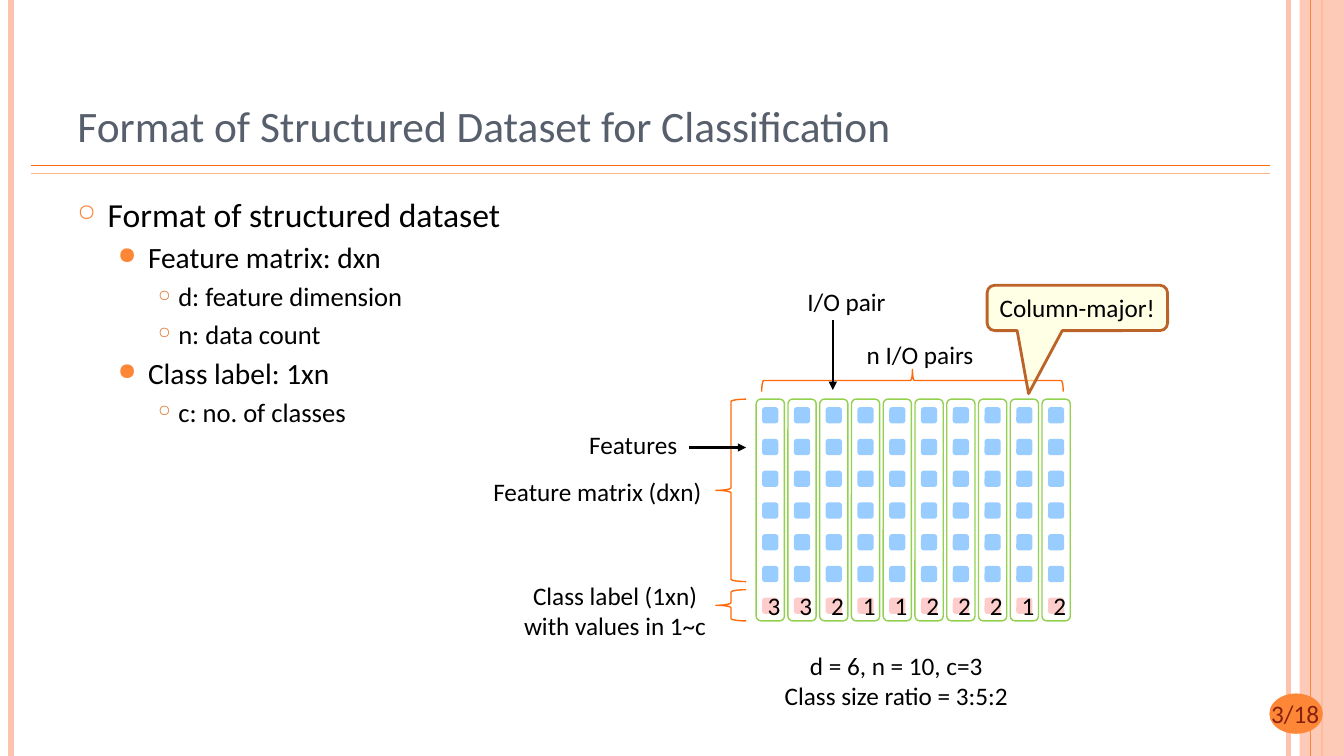
import pptx
import pptx.util
import pptx.dml.color
import pptx.enum.shapes
import pptx.enum.text
import pptx.oxml.ns
import lxml.etree

Inches = pptx.util.Inches
Pt = pptx.util.Pt
RGBColor = pptx.dml.color.RGBColor
MSO_SHAPE = pptx.enum.shapes.MSO_SHAPE
ANCHOR = pptx.enum.text.MSO_ANCHOR
ALIGN = pptx.enum.text.PP_ALIGN
qn = pptx.oxml.ns.qn

BLACK = RGBColor(0x00, 0x00, 0x00)
SLATE = RGBColor(0x57, 0x5F, 0x6D)
ORANGE = RGBColor(0xFE, 0x86, 0x37)
DEEP_ORANGE = RGBColor(0xFF, 0x6B, 0x0A)
PALE_ORANGE = RGBColor(0xFE, 0xB6, 0x87)
RUST = RGBColor(0xE0, 0x76, 0x31)
BROWN = RGBColor(0xBC, 0x63, 0x29)
MAROON = RGBColor(0x86, 0x21, 0x10)
SALMON = RGBColor(0xFE, 0xC3, 0xAE)
BLUE = RGBColor(0x99, 0xCC, 0xFF)
PINK = RGBColor(0xFF, 0xCC, 0xCC)
GREEN = RGBColor(0x92, 0xD0, 0x50)
CREAM = RGBColor(0xFF, 0xFF, 0xCC)

prs = pptx.Presentation()
prs.slide_width = Inches(13.33)
prs.slide_height = Inches(7.5)
s = prs.slides.add_slide(prs.slide_layouts[6])


def add_line(x1, y1, x2, y2, color, width, arrow=False):
    ln = s.shapes.add_connector(pptx.enum.shapes.MSO_CONNECTOR.STRAIGHT,
                                Inches(x1), Inches(y1), Inches(x2), Inches(y2))
    ln.line.color.rgb = color
    ln.line.width = Pt(width)
    if arrow:
        lxml.etree.SubElement(ln.line._get_or_add_ln(), qn("a:tailEnd"), type="triangle")
    lxml.etree.SubElement(ln._element.spPr, qn("a:effectLst"))


def add_box(kind, x, y, w, h, fill=None, line=None, width=1, alpha=100,
            lines=(), size=18, color=BLACK, align=ALIGN.CENTER, wrap=True):
    box = Inches(x), Inches(y), Inches(w), Inches(h)
    if kind is None:
        sp = s.shapes.add_textbox(*box)
    else:
        sp = s.shapes.add_shape(kind, *box)
        sp.shadow.inherit = False
        sp.text_frame.vertical_anchor = ANCHOR.MIDDLE
        if fill is None:
            sp.fill.background()
        else:
            sp.fill.solid()
            sp.fill.fore_color.rgb = fill
        if alpha < 100:
            clr = sp._element.spPr.find(qn("a:solidFill")).find(qn("a:srgbClr"))
            lxml.etree.SubElement(clr, qn("a:alpha"), val=str(alpha * 1000))
        if line is None:
            sp.line.fill.background()
        else:
            sp.line.color.rgb = line
            sp.line.width = Pt(width)
    tf = sp.text_frame
    tf.word_wrap = wrap
    for i, text in enumerate(lines):
        p = tf.add_paragraph() if i else tf.paragraphs[0]
        p.alignment = align
        r = p.add_run()
        r.text = text
        r.font.name = "Calibri"
        r.font.size = Pt(size)
        r.font.color.rgb = color
    return sp


for x, color, width in [(12.78, SALMON, 3), (0.11, SALMON, 4.5), (13.11, ORANGE, 1.5)]:
    add_line(x, 0, x, 7.5, color, width)
add_box(MSO_SHAPE.RECTANGLE, 12.89, 0, 0.44, 7.5, SALMON, alpha=87)
add_line(13, 0, 13, 7.5, ORANGE, 0.75)
add_line(0.31, 1.64, 12.6, 1.64, DEEP_ORANGE, 1)
add_line(0.31, 1.72, 12.6, 1.72, PALE_ORANGE, 1)
add_box(MSO_SHAPE.OVAL, 12.59, 6.88, 0.53, 0.4, ORANGE)
add_box(None, 12.24, 6.88, 1.21, 0.4, lines=["3/18"], color=MAROON)

title = add_box(None, 0.67, 0.3, 10.89, 1.25, size=31, color=SLATE, align=ALIGN.LEFT,
                lines=["Format of Structured Dataset for Classification"])
title.text_frame.vertical_anchor = ANCHOR.BOTTOM

levels = [
    (0.3, 0.3, "○", ORANGE, 70, 24),
    (0.7, 0.3, "●", ORANGE, 80, 21),
    (1.0, 0.2, "○", RUST, 60, 19),
]
outline = [
    (0, "Format of structured dataset"),
    (1, "Feature matrix: dxn"),
    (2, "d: feature dimension"),
    (2, "n: data count"),
    (1, "Class label: 1xn"),
    (2, "c: no. of classes"),
]
body = add_box(None, 0.67, 1.87, 10.89, 5.21, align=ALIGN.LEFT,
               lines=[text for level, text in outline])
for p, (level, text) in zip(body.text_frame.paragraphs, outline):
    margin, hang, bullet, color, percent, size = levels[level]
    p.level = level
    p.space_before = Pt(4 if level else 0)
    p.runs[0].font.size = Pt(size)
    pPr = p._p.get_or_add_pPr()
    pPr.set("marL", str(Inches(margin)))
    pPr.set("indent", str(-Inches(hang)))
    clr = lxml.etree.SubElement(pPr, qn("a:buClr"))
    lxml.etree.SubElement(clr, qn("a:srgbClr"), val=str(color))
    lxml.etree.SubElement(pPr, qn("a:buSzPct"), val=str(percent * 1000))
    lxml.etree.SubElement(pPr, qn("a:buChar"), char=bullet)

PITCH = 0.315
CELL = 0.16
FEATURES = 6
for col, label in enumerate("3321122212"):
    x = 7.56 + col * PITCH
    for row in range(FEATURES):
        add_box(MSO_SHAPE.ROUNDED_RECTANGLE, x, 4.04 + row * PITCH, CELL, CELL, BLUE)
    add_box(MSO_SHAPE.ROUNDED_RECTANGLE, x, 4.04 + FEATURES * PITCH, CELL, CELL, PINK,
            lines=[label])
    add_box(MSO_SHAPE.ROUNDED_RECTANGLE, 7.5 + col * PITCH, 3.96, 0.28, 2.2, line=GREEN)

for x, y, w, h, angle in [(7.1, 3.96, 0.3, 1.81, 0), (7.1, 5.85, 0.3, 0.31, 0),
                          (8.94, 2.28, 0.22, 2.99, 90)]:
    brace = add_box(MSO_SHAPE.LEFT_BRACE, x, y, w, h, line=DEEP_ORANGE)
    brace.rotation = angle

for x, y, w, h, lines in [
    (4.78, 4.68, 2.29, 0.4, ["Feature matrix (dxn)"]),
    (5.09, 5.71, 2.02, 0.71, ["Class label (1xn)", "with values in 1~c"]),
    (8.49, 3.32, 1.27, 0.4, ["n I/O pairs"]),
    (7.67, 6.4, 2.44, 0.71, ["d = 6, n = 10, c=3", "Class size ratio = 3:5:2"]),
    (5.74, 4.21, 1.08, 0.4, ["Features"]),
    (7.9, 2.79, 0.99, 0.4, ["I/O pair"]),
]:
    add_box(None, x, y, w, h, lines=lines, wrap=False)

callout = add_box(MSO_SHAPE.ROUNDED_RECTANGULAR_CALLOUT, 9.79, 2.83, 1.79, 0.45, CREAM,
                  BROWN, 2, alpha=50, lines=["Column-major!"], wrap=False)
for i, value in enumerate([-0.27, 1.89, 0.17]):
    callout.adjustments[i] = value

add_line(6.83, 4.44, 7.4, 4.44, BLACK, 1.75, arrow=True)
add_line(8.26, 3.17, 8.26, 3.87, BLACK, 1.75, arrow=True)

prs.save("out.pptx")
